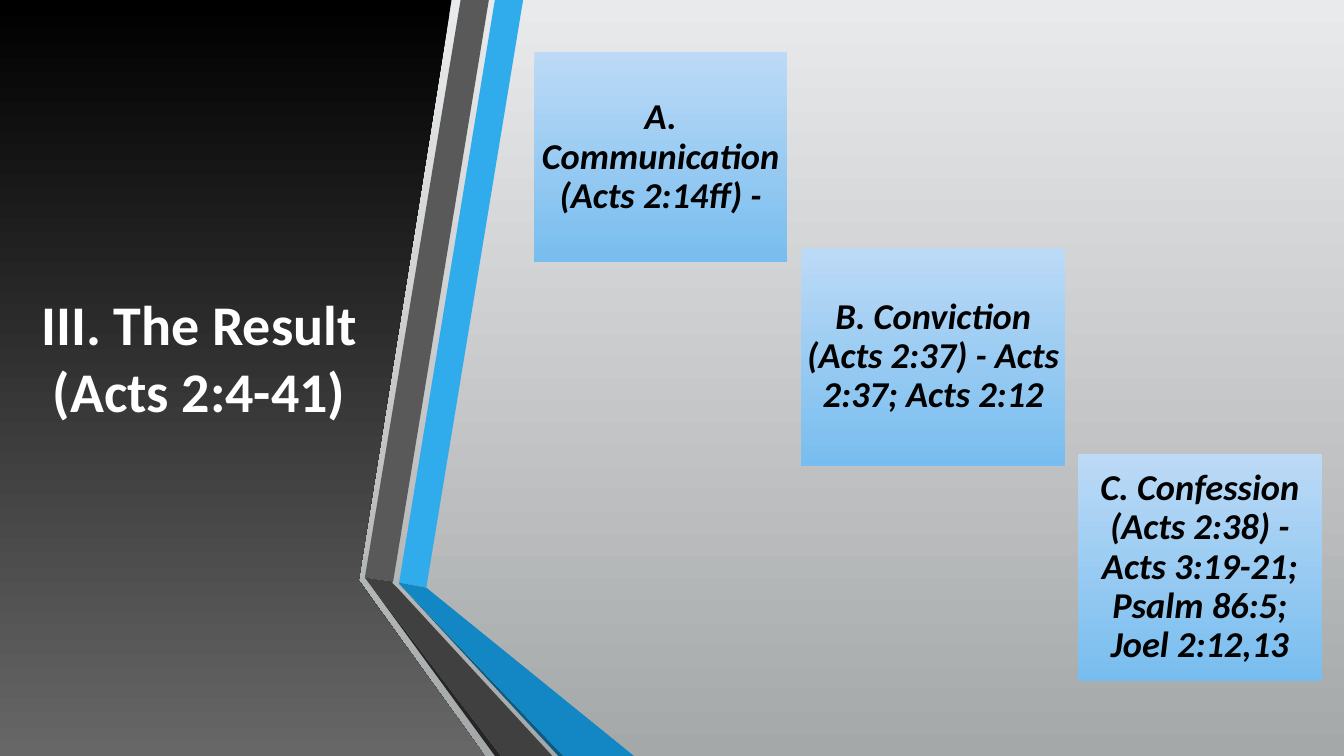
import pptx
import pptx.dml.color
import pptx.dml.fill
import pptx.enum.shapes
import pptx.enum.text
import pptx.shapes.autoshape
import pptx.shapes.shapetree
import pptx.text.text
import pptx.util
from dataclasses import dataclass

RGBColor = pptx.dml.color.RGBColor
Shape = pptx.shapes.autoshape.Shape
Point = tuple[float, float]

WHITE = RGBColor(0xFF, 0xFF, 0xFF)
BLACK = RGBColor(0x00, 0x00, 0x00)
SMOKE = RGBColor(0x67, 0x67, 0x67)
MIST = RGBColor(0xE9, 0xEA, 0xEB)
STONE = RGBColor(0xA5, 0xA8, 0xA9)
PALE = RGBColor(0xBC, 0xDA, 0xF6)
SKY = RGBColor(0x78, 0xBD, 0xEF)
AZURE = RGBColor(0x30, 0xAC, 0xEC)
OCEAN = RGBColor(0x12, 0x87, 0xC3)
NAVY = RGBColor(0x0C, 0x5A, 0x82)
STEEL = RGBColor(0x59, 0x59, 0x59)
IRON = RGBColor(0x40, 0x40, 0x40)
COAL = RGBColor(0x26, 0x26, 0x26)

FONT = "Calibri"
WIDTH = pptx.util.Inches(13.333)
HEIGHT = pptx.util.Inches(7.5)
COL = WIDTH / 40
ROW = HEIGHT / 30


@dataclass(frozen=True)
class Band:
    color: RGBColor
    points: list[Point]


@dataclass(frozen=True)
class Step:
    col: float
    row: float
    cols: float
    rows: float
    text: str


PANEL: list[Point] = [(10.56, 0), (13.44, 0), (10.68, 23), (10.68, 23.04),
                      (14.43, 30), (0, 30), (0, 0)]

BANDS = [
    Band(AZURE, [(11.88, 23.12), (12.69, 23.32), (15.57, 0), (14.73, 0)]),
    Band(STEEL, [(14.55, 0), (13.71, 0), (10.86, 22.92), (11.7, 23.08)]),
    Band(COAL, [(10.86, 22.92), (14.73, 30), (14.91, 30)]),
    Band(NAVY, [(11.88, 23.16), (16.62, 30), (16.77, 30)]),
    Band(OCEAN, [(11.88, 23.16), (16.77, 30), (18.87, 30), (12.69, 23.32),
                 (11.88, 23.12)]),
    Band(IRON, [(16.44, 30), (11.82, 23.32), (11.67, 23.12), (11.7, 23.08),
                (10.86, 22.92), (14.91, 30)]),
]

STEPS = [
    Step(15.9, 2.08, 7.53, 8.32, "A. Communication (Acts 2:14ff) -"),
    Step(23.85, 9.84, 7.86, 8.64,
         "B. Conviction (Acts 2:37) - Acts 2:37; Acts 2:12"),
    Step(32.07, 18, 7.29, 9.04,
         "C. Confession (Acts 2:38) - Acts 3:19-21; Psalm 86:5; Joel 2:12,13"),
]


def place(col: float, row: float) -> tuple[int, int]:
    return round(col * COL), round(row * ROW)


def shade(fill: pptx.dml.fill.FillFormat, top: RGBColor, end: RGBColor) -> None:
    fill.gradient()
    fill.gradient_angle = 270
    for stop, color in zip(fill.gradient_stops, (top, end)):
        stop.color.rgb = color


def strip(shape: Shape) -> None:
    shape.shadow.inherit = False
    shape.line.fill.background()


def trace(shapes, points: list[Point]) -> Shape:
    first, *rest = [place(*point) for point in points]
    pen = shapes.build_freeform(*first)
    pen.add_line_segments(rest, close=True)
    shape = pen.convert_to_shape()
    strip(shape)
    return shape


def write(frame: pptx.text.text.TextFrame, text: str, size: int,
          color: RGBColor, slant: bool, pitch: float) -> None:
    frame.word_wrap = True
    frame.auto_size = pptx.enum.text.MSO_AUTO_SIZE.NONE
    frame.vertical_anchor = pptx.enum.text.MSO_ANCHOR.MIDDLE
    para = frame.paragraphs[0]
    para.alignment = pptx.enum.text.PP_ALIGN.CENTER
    para.line_spacing = pitch
    run = para.add_run()
    run.text = text
    run.font.name = FONT
    run.font.size = pptx.util.Pt(size)
    run.font.bold = True
    run.font.italic = slant
    run.font.color.rgb = color


def add_step(shapes: pptx.shapes.shapetree.SlideShapes, step: Step) -> None:
    box = shapes.add_shape(pptx.enum.shapes.MSO_SHAPE.RECTANGLE,
                           *place(step.col, step.row),
                           *place(step.cols, step.rows))
    strip(box)
    shade(box.fill, PALE, SKY)
    frame = box.text_frame
    inset = pptx.util.Inches(0.02)
    frame.margin_left = frame.margin_right = inset
    frame.margin_top = frame.margin_bottom = inset
    write(frame, step.text, 26, BLACK, True, 0.9)


def main() -> None:
    deck = pptx.Presentation()
    deck.slide_width, deck.slide_height = WIDTH, HEIGHT
    slide = deck.slides.add_slide(deck.slide_layouts[5])
    shapes = slide.shapes
    shade(slide.background.fill, MIST, STONE)

    shade(trace(shapes, PANEL).fill, BLACK, SMOKE)
    group = shapes.add_group_shape()
    for band in BANDS:
        fill = trace(group.shapes, band.points).fill
        fill.solid()
        fill.fore_color.rgb = band.color

    title = shapes.title
    title.left, title.top = place(0.63, 3)
    title.width, title.height = place(10.59, 22.32)
    write(title.text_frame, "III. The Result (Acts 2:4-41)", 40, WHITE, False, 1.0)
    title.element.getparent().append(title.element)

    for step in STEPS:
        add_step(shapes, step)
    deck.save("out.pptx")


if __name__ == "__main__":
    main()
